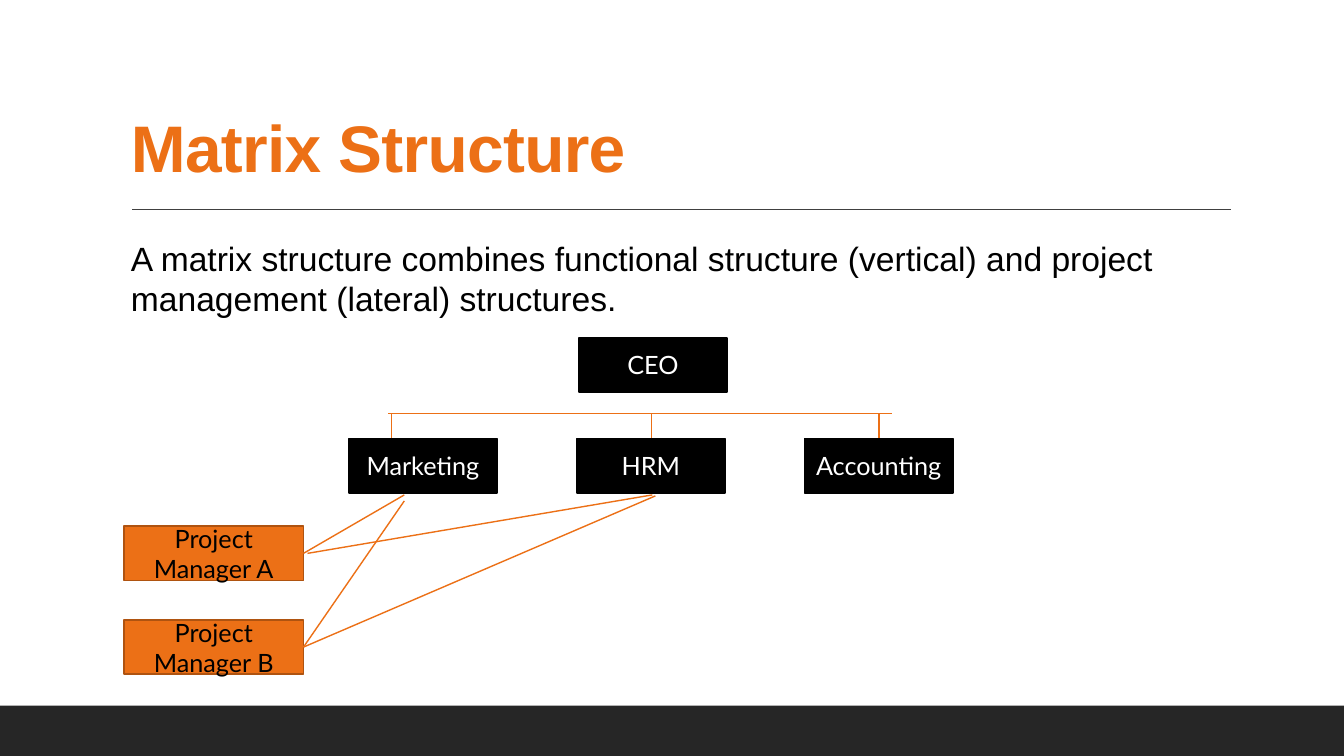
import pptx
import pptx.util
import pptx.dml.color
import pptx.enum.shapes
import pptx.enum.text
import pptx.oxml.ns
import lxml.etree

Inches, Pt = pptx.util.Inches, pptx.util.Pt
RGB = pptx.dml.color.RGBColor
SHAPE = pptx.enum.shapes.MSO_SHAPE
STRAIGHT = pptx.enum.shapes.MSO_CONNECTOR.STRAIGHT
ALIGN = pptx.enum.text.PP_ALIGN
ANCHOR = pptx.enum.text.MSO_ANCHOR

ORANGE = RGB(0xEC, 0x70, 0x16)
BROWN = RGB(0xAF, 0x53, 0x10)
BLACK = RGB(0, 0, 0)
WHITE = RGB(255, 255, 255)
DARK = RGB(0x26, 0x26, 0x26)
GREY = RGB(0x40, 0x40, 0x40)

# Content
TITLE = "Matrix Structure"
BODY = ("A matrix structure combines functional structure (vertical) "
        "and project management (lateral) structures.")
CHIEF = "CEO"
DEPARTMENTS = ["Marketing", "HRM", "Accounting"]
MANAGERS = ["Project Manager A", "Project Manager B"]

# Layout in inches
BOX_W, BOX_H = 1.47, 0.54
DEPT_X, DEPT_Y, DEPT_STEP = 3.46, 4.35, 2.26
MANAGER_X, MANAGER_Y, MANAGER_W, MANAGER_STEP = 1.23, 5.22, 1.78, 0.93
BUS_Y, BUS_LEFT, BUS_RIGHT = 4.1, 3.85, 8.85
DROPS = [3.88, 6.46, 8.72]
# Per manager: (start x, end x, end y) of each link to a department
LINKS = [[(3.01, 4.01, 4.91), (3.05, 6.47, 4.91)],
         [(3.01, 4.01, 4.97), (3.01, 6.5, 4.92)]]

prs = pptx.Presentation()
prs.slide_width, prs.slide_height = Inches(13.33), Inches(7.5)
s = prs.slides.add_slide(prs.slide_layouts[6])


def write(sp, text, size=18, font="Lato", color=BLACK, bold=False,
          align=ALIGN.LEFT, anchor=ANCHOR.TOP):
    tf = sp.text_frame
    tf.word_wrap = True
    tf.vertical_anchor = anchor
    p = tf.paragraphs[0]
    p.alignment = align
    r = p.add_run()
    r.text = text
    r.font.size, r.font.name, r.font.bold = Pt(size), font, bold
    r.font.color.rgb = color
    return p


def add_rect(x, y, w, h, fill, line=None):
    sp = s.shapes.add_shape(SHAPE.RECTANGLE, Inches(x), Inches(y), Inches(w), Inches(h))
    sp.shadow.inherit = False
    sp.fill.solid()
    sp.fill.fore_color.rgb = fill
    if line is None:
        sp.line.fill.background()
    else:
        sp.line.color.rgb, sp.line.width = line, Pt(1.25)
    return sp


def add_box(text, x, y, w=BOX_W, fill=BLACK, line=BLACK, color=WHITE):
    write(add_rect(x, y, w, BOX_H, fill, line), text, color=color,
          align=ALIGN.CENTER, anchor=ANCHOR.MIDDLE)


def add_line(x1, y1, x2, y2, color=ORANGE):
    c = s.shapes.add_connector(STRAIGHT, Inches(x1), Inches(y1), Inches(x2), Inches(y2))
    c.line.color.rgb, c.line.width = color, Pt(1)
    lxml.etree.SubElement(c._element.spPr, pptx.oxml.ns.qn("a:effectLst"))


# Footer band and title rule
add_rect(0, 7, 13.33, 0.5, DARK)
add_line(1.31, 2.08, 12.21, 2.08, GREY)

# Title and body
tb = s.shapes.add_textbox(Inches(1.2), Inches(0.31), Inches(11), Inches(1.59))
p = write(tb, TITLE, size=47, font="Arial", color=ORANGE, bold=True, anchor=ANCHOR.BOTTOM)
p.line_spacing = 0.9
p.runs[0].font._element.set("spc", "-50")

tb = s.shapes.add_textbox(Inches(1.2), Inches(2.31), Inches(11), Inches(4.11))
tb.text_frame.margin_left, tb.text_frame.margin_right = Inches(0.1), 0
p = write(tb, BODY, size=24, font="Arial")
p.space_before, p.space_after = Pt(12), Pt(2)

# Chief and departments
add_box(CHIEF, 5.74, 3.35)
add_line(BUS_LEFT, BUS_Y, BUS_RIGHT, BUS_Y)
for i, (name, drop) in enumerate(zip(DEPARTMENTS, DROPS)):
    add_line(drop, BUS_Y, drop, DEPT_Y)
    add_box(name, DEPT_X + i * DEPT_STEP, DEPT_Y)

# Project managers and their links
for i, (name, links) in enumerate(zip(MANAGERS, LINKS)):
    y = MANAGER_Y + i * MANAGER_STEP
    add_box(name, MANAGER_X, y, MANAGER_W, ORANGE, BROWN, BLACK)
    for x1, x2, y2 in links:
        add_line(x1, y + BOX_H / 2, x2, y2)

prs.save("out.pptx")
